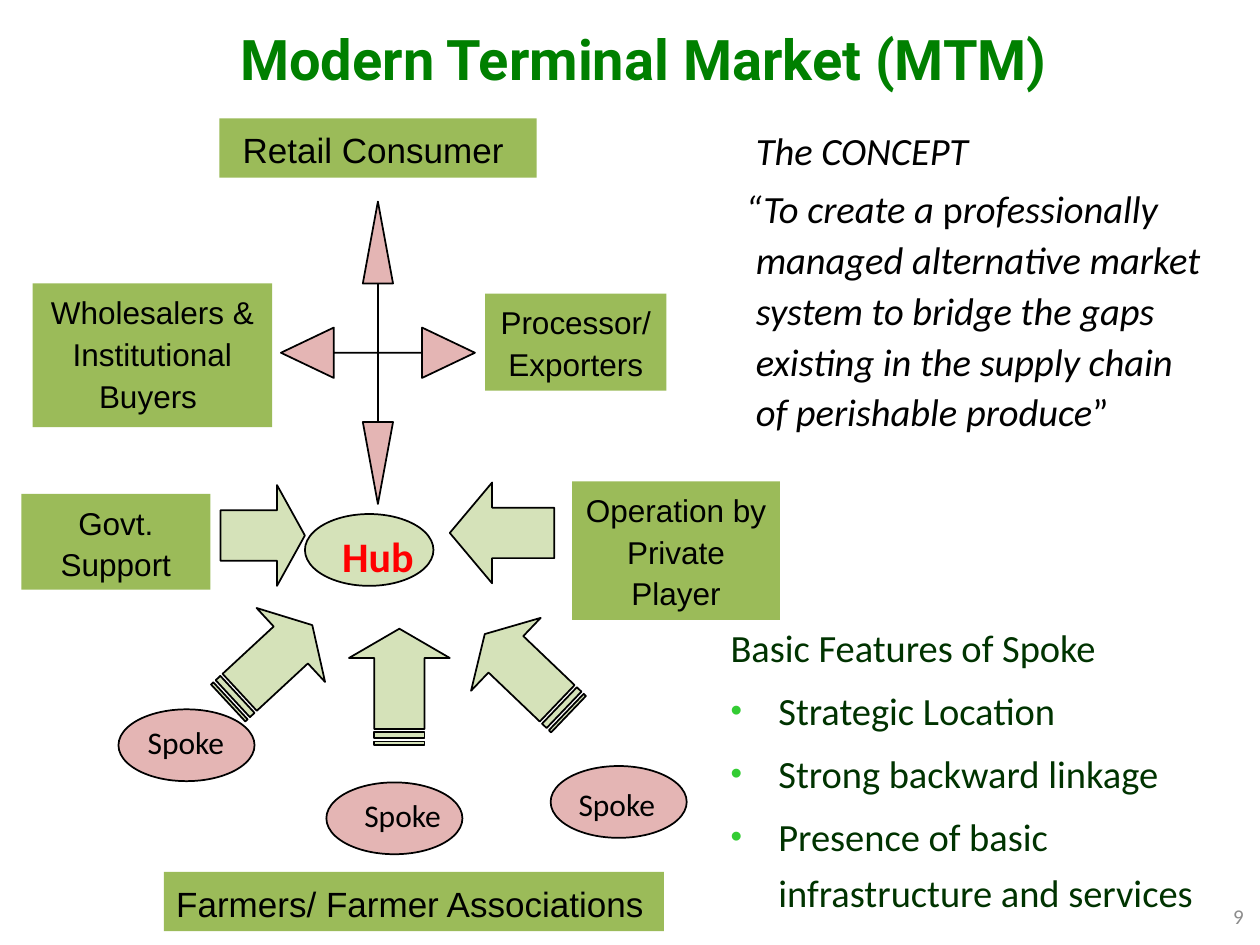
from lxml.etree import SubElement
from pptx import Presentation
from pptx.dml.color import RGBColor
from pptx.enum.shapes import MSO_SHAPE
from pptx.enum.text import MSO_ANCHOR, PP_ALIGN
from pptx.oxml.ns import qn
from pptx.util import Pt

PX = 9144
BLACK = RGBColor(0x00, 0x00, 0x00)
OLIVE = RGBColor(0x9B, 0xBB, 0x59)
BRICK = RGBColor(0xC0, 0x50, 0x4D)
TITLE_GREEN = RGBColor(0x00, 0x80, 0x00)
DARK_GREEN = RGBColor(0x00, 0x33, 0x00)
RED = RGBColor(0xFF, 0x00, 0x00)
GRAY = RGBColor(0x8C, 0x8C, 0x8C)


def paint(sp, color, sheer=True):
    sp.shadow.inherit = False
    sp.fill.solid()
    sp.fill.fore_color.rgb = color
    if sheer:
        clr = sp.fill._xPr.find(qn("a:solidFill")).find(qn("a:srgbClr"))
        SubElement(clr, qn("a:alpha"), val="42000")
        sp.line.color.rgb = BLACK
        sp.line.width = Pt(1)
    else:
        sp.line.fill.background()


def write(sp, text, size, font="Calibri", color=BLACK, align=PP_ALIGN.CENTER, spacing=1.1):
    tf = sp.text_frame
    tf.word_wrap = True
    tf.vertical_anchor = MSO_ANCHOR.TOP
    tf.text = text
    for p in tf.paragraphs:
        p.alignment = align
        p.line_spacing = spacing
        for r in p.runs:
            r.font.size = Pt(size)
            r.font.name = font
            r.font.color.rgb = color


prs = Presentation()
prs.slide_width, prs.slide_height = 1000 * PX, 750 * PX
s = prs.slides.add_slide(prs.slide_layouts[5])
shapes = s.shapes

title = shapes.title
title.left, title.top, title.width, title.height = [v * PX for v in (40, 0, 942, 92)]
write(title, "Modern Terminal Market (MTM)", 32, "Roboto", TITLE_GREEN, spacing=1.0)
title.text_frame.vertical_anchor = MSO_ANCHOR.MIDDLE
title.text_frame.paragraphs[0].runs[0].font.bold = True

ovals = [
    (242, 408, 102, OLIVE),
    (437, 608, 108, BRICK),
    (259, 621, 108, BRICK),
    (94, 563, 108, BRICK),
]
for x, y, w, color in ovals:
    sp = shapes.add_shape(MSO_SHAPE.OVAL, x * PX, y * PX, w * PX, 57 * PX)
    paint(sp, color)

for x, y in [(427, 615), (257, 624), (85, 566)]:
    sp = shapes.add_textbox(x * PX, y * PX, 125 * PX, 43 * PX)
    write(sp, "Spoke", 18)

hub = shapes.add_textbox(248 * PX, 412 * PX, 104 * PX, 55 * PX)
write(hub, "Hub", 24, color=RED)
hub.text_frame.paragraphs[0].runs[0].font.bold = True

arrows = [
    (MSO_SHAPE.STRIPED_RIGHT_ARROW, 169, 487, 91, 317.2, 0.29),
    (MSO_SHAPE.STRIPED_RIGHT_ARROW, 271, 505, 92, 270, 0.29),
    (MSO_SHAPE.STRIPED_RIGHT_ARROW, 372, 495, 92, 223.7, 0.29),
    (MSO_SHAPE.LEFT_ARROW, 357, 383, 83, 0, 0.42),
    (MSO_SHAPE.RIGHT_ARROW, 175, 385, 67, 0, 0.33),
]
for kind, x, y, w, angle, head in arrows:
    sp = shapes.add_shape(kind, x * PX, y * PX, w * PX, 80 * PX)
    sp.rotation = angle
    sp.adjustments[0] = 0.5
    sp.adjustments[1] = head
    paint(sp, OLIVE)

cx, cy = 300, 280
points = []
for dx, dy, tip, base, half in [(0, -1, 120, 55, 12), (-1, 0, 77, 35, 20),
                                (0, 1, 120, 55, 12), (1, 0, 77, 35, 20)]:
    for along, side in [(base, 0), (base, half), (tip, 0), (base, -half), (base, 0), (0, 0)]:
        points.append((cx + dx * along + dy * side, cy + dy * along + dx * side))
builder = shapes.build_freeform(cx, cy, scale=PX)
builder.add_line_segments(points)
cross = builder.convert_to_shape()
paint(cross, BRICK)

boxes = [
    ("Farmers/ Farmer Associations", 130, 692, 397, 47, 20, PP_ALIGN.LEFT),
    ("Retail Consumer ", 174, 94, 252, 47, 20, PP_ALIGN.CENTER),
    ("Wholesalers & Institutional Buyers ", 26, 225, 190, 114, 18, PP_ALIGN.CENTER),
    ("Processor/ Exporters", 385, 233, 144, 77, 18, PP_ALIGN.CENTER),
    ("Govt. Support", 17, 392, 150, 76, 18, PP_ALIGN.CENTER),
    ("Operation by Private Player", 454, 382, 165, 110, 18, PP_ALIGN.CENTER),
]
for text, x, y, w, h, size, align in boxes:
    sp = shapes.add_shape(MSO_SHAPE.RECTANGLE, x * PX, y * PX, w * PX, h * PX)
    paint(sp, OLIVE, sheer=False)
    write(sp, text, size, "Arial", align=align)

concept = shapes.add_textbox(552 * PX, 92 * PX, 419 * PX, 291 * PX)
write(concept, "The CONCEPT\n", 22, align=PP_ALIGN.LEFT)
heading, quote = concept.text_frame.paragraphs
heading.runs[0].font.italic = True
for text, italic in [
    ("“To create a", True),
    (" p", False),
    ("rofessionally managed alternative market system to bridge the gaps "
     "existing in the supply chain of perishable produce", True),
    ("”", False),
]:
    r = quote.add_run()
    r.text = text
    r.font.size = Pt(22)
    r.font.name = "Calibri"
    r.font.color.rgb = BLACK
    r.font.italic = italic
for p, indent in [(heading, 0), (quote, -8)]:
    p.space_before = Pt(4.4)
    pPr = p._p.get_or_add_pPr()
    pPr.set("marL", str(38 * PX))
    pPr.set("indent", str(indent * PX))

features = shapes.add_textbox(558 * PX, 483 * PX, 433 * PX, 250 * PX)
write(features, "Basic Features of Spoke\nStrategic Location\nStrong backward linkage\n"
      "Presence of basic infrastructure and services", 22, color=DARK_GREEN,
      align=PP_ALIGN.LEFT, spacing=1.2)
for i, p in enumerate(features.text_frame.paragraphs):
    p.space_before = Pt(4.4)
    pPr = p._p.get_or_add_pPr()
    pPr.set("marL", str(50 * PX))
    pPr.set("indent", str(-38 * PX))
    if i:
        SubElement(SubElement(pPr, qn("a:buClr")), qn("a:srgbClr"), val="33CC33")
        SubElement(pPr, qn("a:buSzPct"), val="85000")
        SubElement(pPr, qn("a:buFont"), typeface="Arial")
        SubElement(pPr, qn("a:buChar"), char="•")

number = shapes.add_textbox(764 * PX, 702 * PX, 233 * PX, 50 * PX)
write(number, "9", 12, color=GRAY, align=PP_ALIGN.RIGHT, spacing=1.0)
number.text_frame.vertical_anchor = MSO_ANCHOR.MIDDLE

prs.save("out.pptx")
